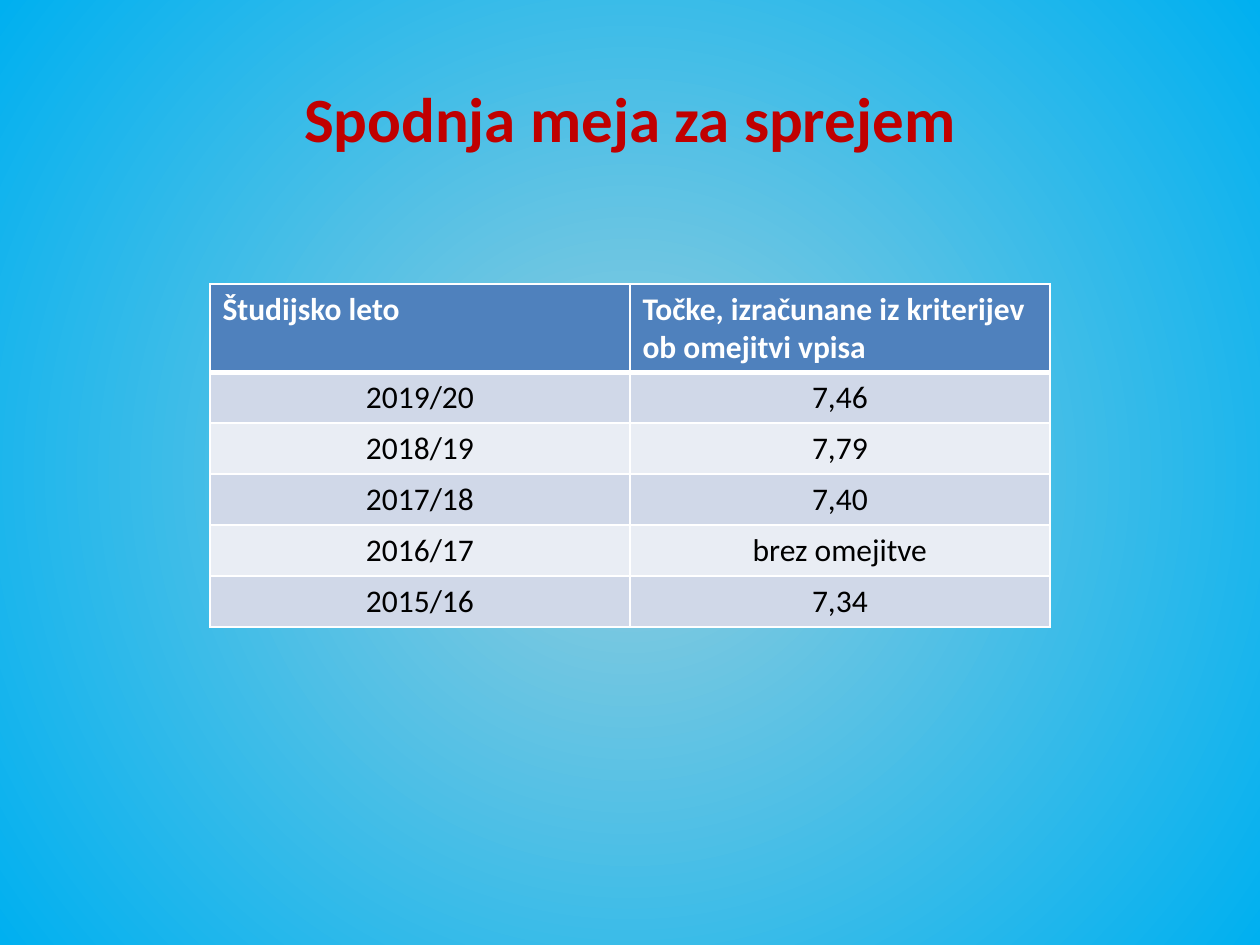
import pptx
import pptx.dml.color
import pptx.enum.text
import pptx.oxml
import pptx.oxml.ns
import pptx.util

RGBColor = pptx.dml.color.RGBColor
ALIGN = pptx.enum.text.PP_ALIGN

RED = RGBColor(0xC0, 0x00, 0x00)
WHITE = RGBColor(0xFF, 0xFF, 0xFF)
BLACK = RGBColor(0x00, 0x00, 0x00)
HEADER_BLUE = RGBColor(0x4F, 0x81, 0xBD)
BANDS = (RGBColor(0xD0, 0xD8, 0xE8), RGBColor(0xE9, 0xED, 0xF4))
GLOW = RGBColor(0x93, 0xCD, 0xDD)
SKY = RGBColor(0x00, 0xB0, 0xF0)

ADMISSION_ROWS = (
    ("Študijsko leto", "Točke, izračunane iz kriterijev ob omejitvi vpisa"),
    ("2019/20", "7,46"),
    ("2018/19", "7,79"),
    ("2017/18", "7,40"),
    ("2016/17", "brez omejitve"),
    ("2015/16", "7,34"),
)


def px(length):
    """Turn whole pixels into EMU."""
    return pptx.util.Emu(round(length * 914400 / 126))


class SlideBuilder:
    """Hold the style and the current slide, and add each kind of element."""

    font_name = "Calibri"

    def __init__(self, presentation):
        self.slide = presentation.slides.add_slide(presentation.slide_layouts[6])

    def radial_background(self, centre, edge):
        fill = self.slide.background.fill
        fill.gradient()
        for stop, color, position in zip(fill.gradient_stops, (centre, edge), (0, 1)):
            stop.color.rgb = color
            stop.position = position
        gradient = next(self.slide.element.iter(pptx.oxml.ns.qn("a:gradFill")))
        gradient.remove(gradient.find(pptx.oxml.ns.qn("a:lin")))
        gradient.append(pptx.oxml.parse_xml(
            f'<a:path {pptx.oxml.ns.nsdecls("a")} path="circle">'
            '<a:fillToRect l="50000" t="50000" r="50000" b="50000"/></a:path>'))

    def set_text(self, text_frame, text, size, color, bold, alignment):
        paragraph = text_frame.paragraphs[0]
        paragraph.text = text
        paragraph.alignment = alignment
        font = paragraph.font
        font.name = self.font_name
        font.size = pptx.util.Pt(size)
        font.bold = bold
        font.color.rgb = color

    def title(self, text, left, top, width, height):
        text_frame = self.slide.shapes.add_textbox(
            px(left), px(top), px(width), px(height)).text_frame
        text_frame.word_wrap = True
        text_frame.vertical_anchor = pptx.enum.text.MSO_ANCHOR.MIDDLE
        self.set_text(text_frame, text, 36, RED, True, ALIGN.CENTER)

    def borders(self, cell, color, **widths):
        properties = cell._tc.get_or_add_tcPr()
        for side, width in widths.items():
            properties.append(pptx.oxml.parse_xml(
                f'<a:ln{side} {pptx.oxml.ns.nsdecls("a")} w="{pptx.util.Pt(width)}">'
                f'<a:solidFill><a:srgbClr val="{color}"/></a:solidFill></a:ln{side}>'))

    def table(self, rows, left, top, column_width, row_height):
        columns = len(rows[0])
        table = self.slide.shapes.add_table(
            len(rows), columns, px(left), px(top),
            px(column_width * columns), px(row_height * len(rows))).table
        for row_index, texts in enumerate(rows):
            header = row_index == 0
            for column_index, text in enumerate(texts):
                cell = table.cell(row_index, column_index)
                self.borders(cell, WHITE, L=1, R=1,
                             T=3 if row_index == 1 else 1, B=3 if header else 1)
                cell.fill.solid()
                cell.fill.fore_color.rgb = HEADER_BLUE if header else BANDS[(row_index - 1) % 2]
                self.set_text(cell.text_frame, text, 18, WHITE if header else BLACK,
                              header, ALIGN.LEFT if header else ALIGN.CENTER)


def main():
    presentation = pptx.Presentation()
    presentation.slide_width = px(1260)
    presentation.slide_height = px(945)
    builder = SlideBuilder(presentation)
    builder.radial_background(GLOW, SKY)
    builder.title("Spodnja meja za sprejem", 63, 38, 1134, 158)
    builder.table(ADMISSION_ROWS, 210, 284, 420, 51)
    presentation.save("out.pptx")


if __name__ == "__main__":
    main()
